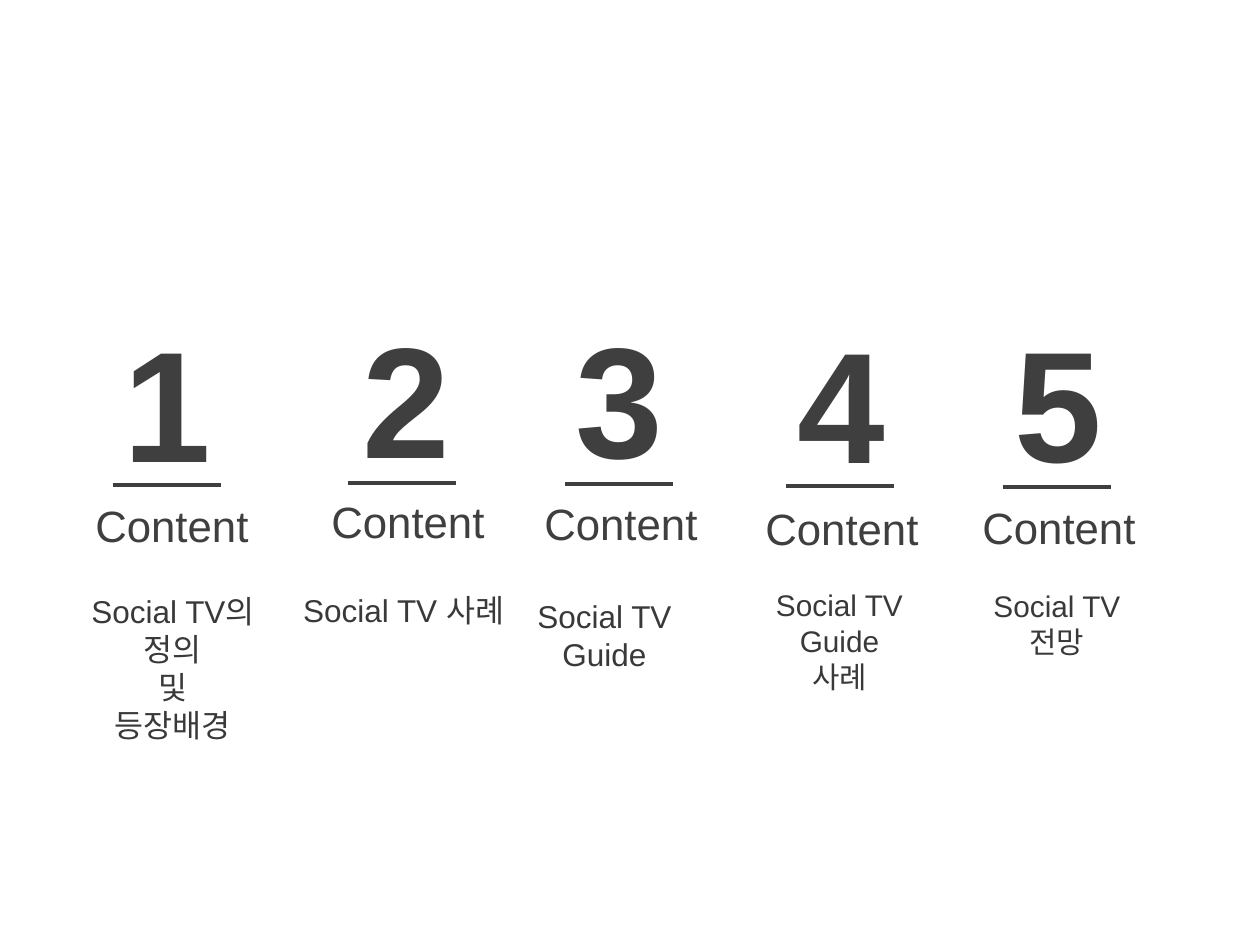
import pptx
import pptx.dml.color
import pptx.enum.shapes
import pptx.enum.text
import pptx.util

PX = 914400 / 126  # EMU per pixel

THEME = {
    "font": "Arial",
    "dark": pptx.dml.color.RGBColor.from_string("3F3F3F"),
    "caption": pptx.dml.color.RGBColor.from_string("3B3838"),
    "number_size": 90,
    "label_size": 25,
    "rule_width": 2.25,
}


def px(n):
    return pptx.util.Emu(round(n * PX))


def add_text(text, x, y, w, h, size, color, bold=False, centered=False, wrap=False):
    sp = slide.shapes.add_textbox(px(x), px(y), px(w), px(h))
    tf = sp.text_frame
    tf.word_wrap = wrap
    tf.auto_size = pptx.enum.text.MSO_AUTO_SIZE.SHAPE_TO_FIT_TEXT
    tf.text = text
    for p in tf.paragraphs:
        if centered:
            p.alignment = pptx.enum.text.PP_ALIGN.CENTER
        for r in p.runs:
            r.font.name = THEME["font"]
            r.font.size = pptx.util.Pt(size)
            r.font.bold = bold
            r.font.color.rgb = color


prs = pptx.Presentation()
prs.slide_width, prs.slide_height = px(1260), px(945)
slide = prs.slides.add_slide(prs.slide_layouts[6])

# Per column: number, rule and label corners, then caption box, size and text
columns = [
    ((111, 299), (113, 485), (83, 493), (72, 586, 202, 165), 18,
     "Social TV의\n정의\n및\n등장배경"),
    ((350, 295), (348, 483), (319, 489), (287, 585, 233, 50), 18,
     "Social TV 사례"),
    ((563, 295), (565, 484), (532, 491), (524, 591, 161, 89), 18,
     "Social TV\nGuide"),
    ((785, 300), (786, 486), (753, 496), (748, 581, 183, 84), 17,
     "Social TV\nGuide\v사례"),
    ((1002, 299), (1003, 487), (970, 495), (978, 582, 158, 84), 17,
     "Social TV\n전망"),
]

for i, (number, rule, label, box, size, caption) in enumerate(columns, 1):
    # Large number
    add_text(str(i), *number, 113, 204, size=THEME["number_size"],
             color=THEME["dark"], bold=True)

    # Rule under the number
    x, y = rule
    line = slide.shapes.add_connector(
        pptx.enum.shapes.MSO_CONNECTOR.STRAIGHT, px(x), px(y), px(x + 108), px(y))
    line.line.color.rgb = THEME["dark"]
    line.line.width = pptx.util.Pt(THEME["rule_width"])
    line._element.spPr.append(pptx.oxml.xmlchemy.OxmlElement("a:effectLst"))

    # Label and caption
    add_text("Content", *label, 203, 66, size=THEME["label_size"],
             color=THEME["dark"], wrap=True)
    add_text(caption, *box, size=size, color=THEME["caption"], centered=True)

prs.save("out.pptx")
